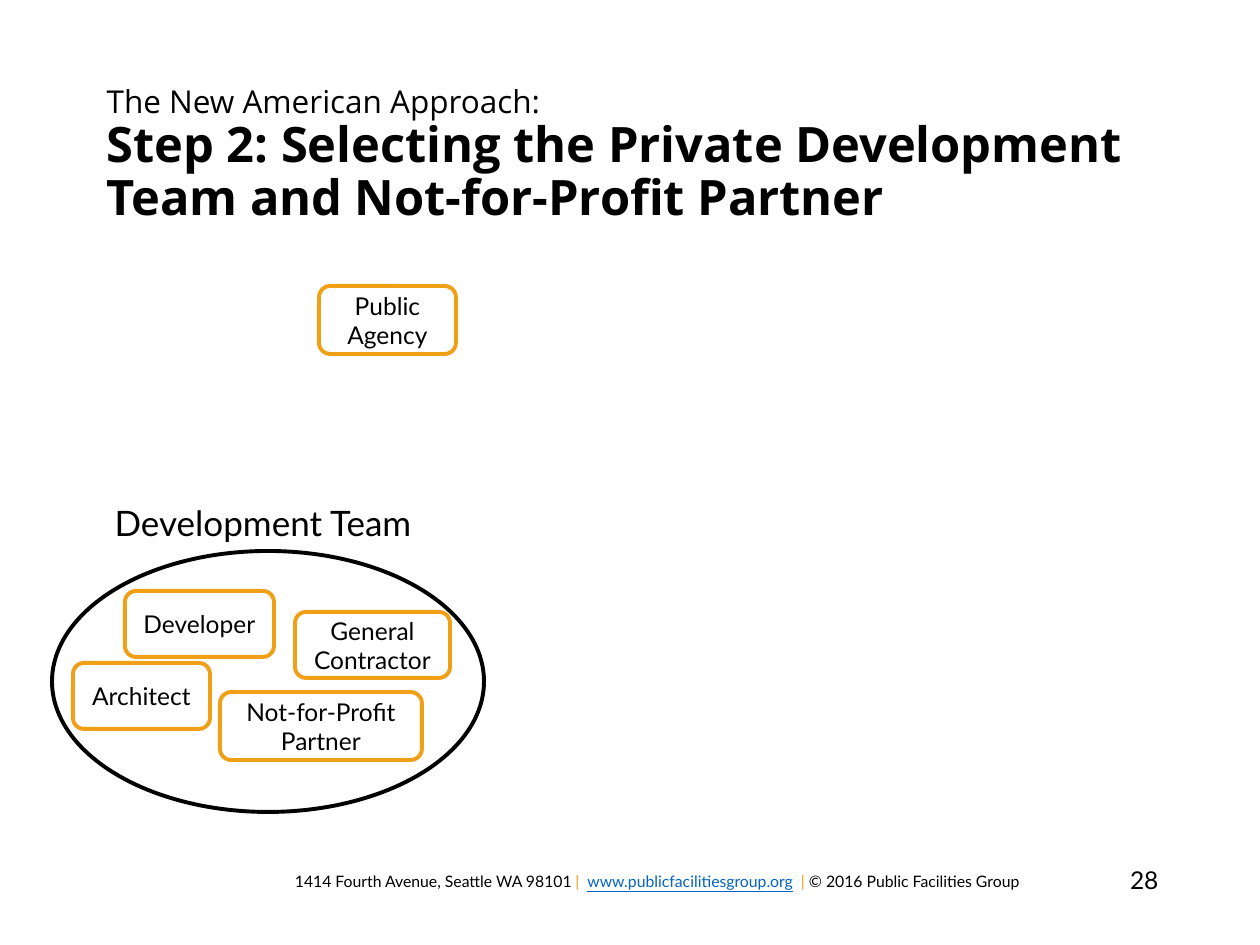
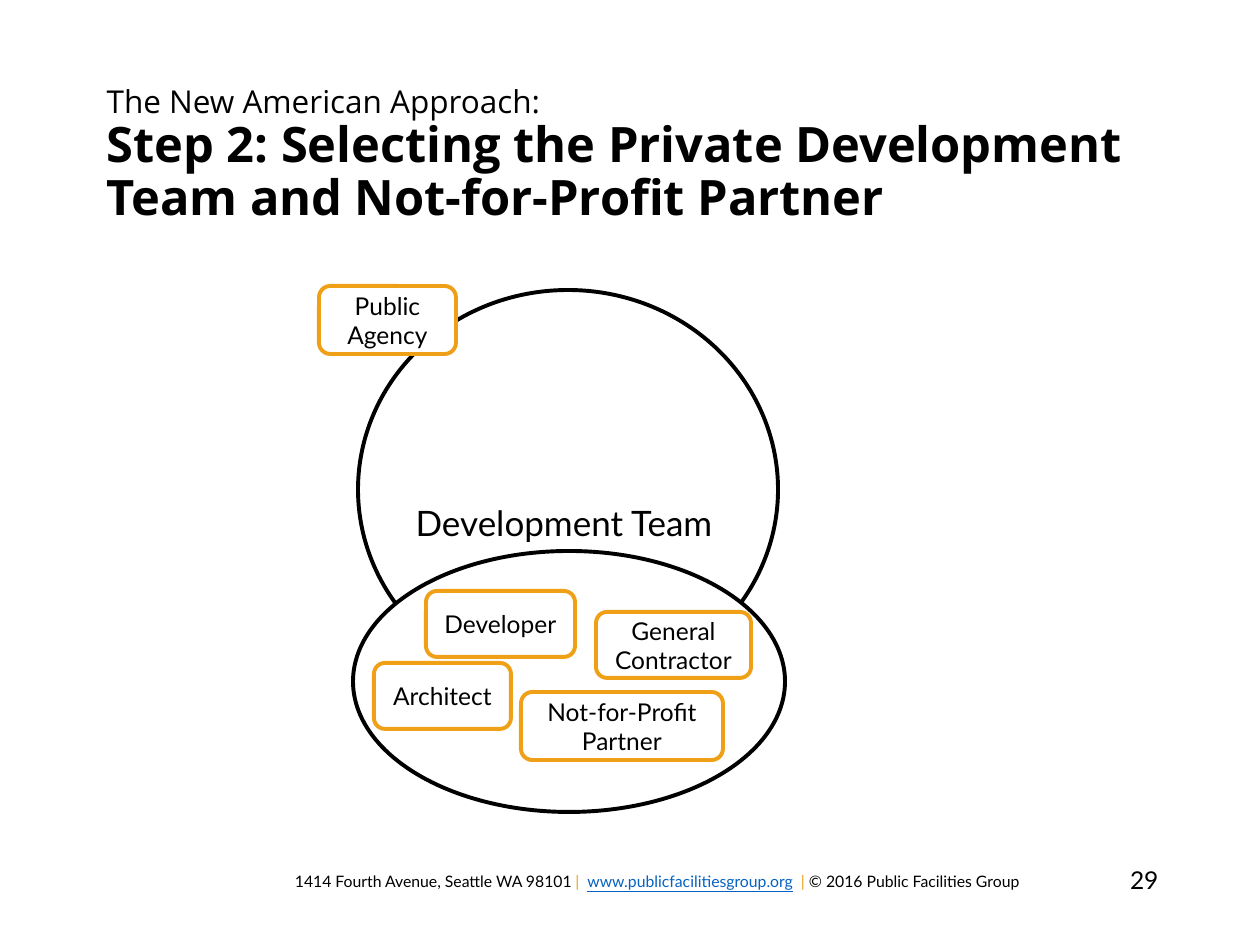
from pptx import Presentation
from pptx.dml.color import RGBColor
from pptx.enum.shapes import MSO_SHAPE
from pptx.enum.text import MSO_ANCHOR, MSO_AUTO_SIZE, PP_ALIGN
from pptx.oxml.ns import qn
from pptx.util import Emu, Pt
from lxml.etree import SubElement

SCALE = 914400 / 126
BLACK, WHITE, GOLD, BLUE = "000000", "FFFFFF", "EFA016", "0563C1"
BODY, HEAD = "Lato", "Open Sans"
SHIFT = 301

TEAM = [
    ("Not-for-Profit Partner", 220, 692, 202, 68),
    ("Developer", 125, 591, 149, 66),
    ("Architect", 73, 663, 137, 66),
    ("General Contractor", 295, 612, 155, 66),
]
FOOTER = [
    ("1414 Fourth Avenue, Seattle WA 98101", BLACK),
    (" |  ", GOLD),
    ("www.publicfacilitiesgroup.org", BLUE),
    ("  ", BLACK),
    ("| ", GOLD),
    ("© 2016 Public Facilities Group", BLACK),
]


def px(*sizes):
    return [Emu(round(size * SCALE)) for size in sizes]


def color(code):
    return RGBColor.from_string(code)


def add_run(para, text, size, code=BLACK, face=BODY, bold=False):
    run = para.add_run()
    run.text = text
    font = run.font
    font.name, font.size, font.bold = face, Pt(size), bold
    font.color.rgb = color(code)
    return run


def add_text(slide, area, align):
    frame = slide.shapes.add_textbox(*px(*area)).text_frame
    frame.word_wrap = True
    para = frame.paragraphs[0]
    para.alignment = align
    return para


def add_form(slide, kind, area, line):
    form = slide.shapes.add_shape(kind, *px(*area))
    form.shadow.inherit = False
    form.fill.solid()
    form.fill.fore_color.rgb = color(WHITE)
    form.line.color.rgb = color(line)
    form.line.width = Pt(2.25)
    return form


def add_ring(slide, *area):
    add_form(slide, MSO_SHAPE.OVAL, area, BLACK)


def add_party(slide, text, *area):
    frame = add_form(slide, MSO_SHAPE.ROUNDED_RECTANGLE, area, GOLD).text_frame
    frame.word_wrap = True
    frame.vertical_anchor = MSO_ANCHOR.MIDDLE
    para = frame.paragraphs[0]
    para.alignment = PP_ALIGN.CENTER
    add_run(para, text, 14)


def add_team(slide, shift):
    add_ring(slide, 52 + shift, 551, 432, 261)
    for text, left, top, width, height in TEAM:
        add_party(slide, text, left + shift, top, width, height)
    label = add_text(slide, (71 + shift, 495, 384, 55), PP_ALIGN.CENTER)
    add_run(label, "Development Team", 20)


def set_title(slide):
    title = slide.shapes.title
    title.left, title.top, title.width, title.height = px(94, 72, 1086, 168)
    frame = title.text_frame
    frame.word_wrap = True
    frame.auto_size = MSO_AUTO_SIZE.NONE
    frame.vertical_anchor = MSO_ANCHOR.MIDDLE
    para = frame.paragraphs[0]
    para.alignment = PP_ALIGN.LEFT
    para.line_spacing = 0.9
    add_run(para, "The New American Approach:", 18, face=HEAD)
    para.add_line_break()
    SubElement(para._p.find(qn("a:br")), qn("a:rPr"), sz="1800")
    add_run(para, "Step 2: Selecting the Private Development Team "
            "and Not-for-Profit Partner", 27.9, face=HEAD, bold=True)


def add_footer(slide, number):
    para = add_text(slide, (276, 866, 762, 50), PP_ALIGN.CENTER)
    for text, code in FOOTER:
        add_run(para, text, 9, code).font.underline = code == BLUE
    add_run(add_text(slide, (1042, 859, 129, 43), PP_ALIGN.RIGHT), number, 14)


def add_slide(deck, number):
    slide = deck.slides.add_slide(deck.slide_layouts[5])
    set_title(slide)
    add_footer(slide, number)
    return slide


def main():
    deck = Presentation()
    deck.slide_width, deck.slide_height = px(1260, 945)

    apart = add_slide(deck, "28")
    add_team(apart, 0)

    joined = add_slide(deck, "29")
    add_ring(joined, 358, 290, 420, 399)
    add_team(joined, SHIFT)

    for slide in (apart, joined):
        add_party(slide, "Public Agency", 319, 286, 137, 68)

    deck.save("out.pptx")


if __name__ == "__main__":
    main()
